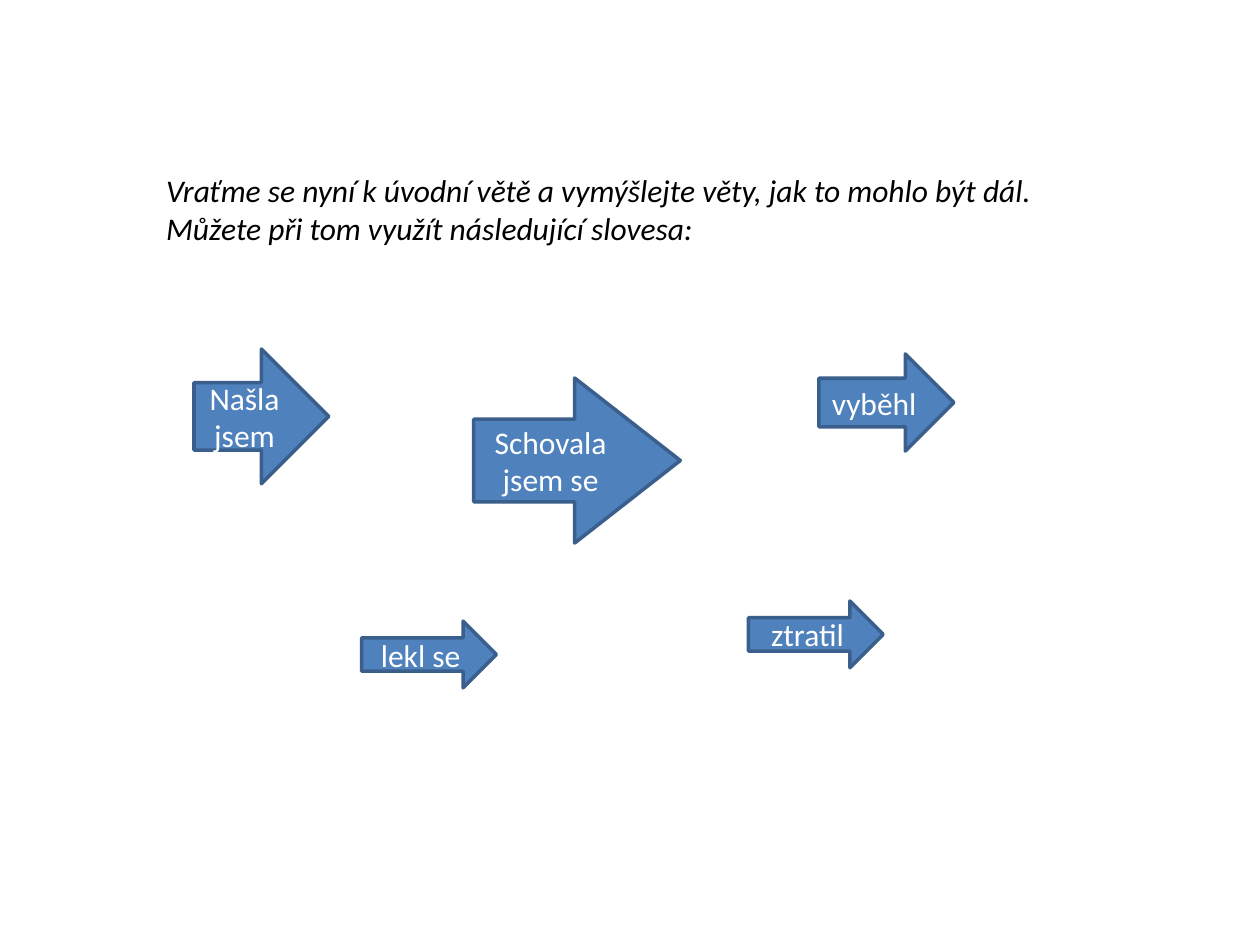
from pptx import Presentation
from pptx.dml.color import RGBColor
from pptx.enum.shapes import MSO_SHAPE
from pptx.enum.text import MSO_ANCHOR, PP_ALIGN
from pptx.util import Inches, Pt

RIGHT_ARROW = MSO_SHAPE.RIGHT_ARROW
MIDDLE = MSO_ANCHOR.MIDDLE
LEFT, CENTER = PP_ALIGN.LEFT, PP_ALIGN.CENTER

BLANK_LAYOUT = 6
FONT = "Calibri"
BLACK, WHITE = "000000", "FFFFFF"
BLUE, DARK_BLUE = "4F81BD", "3A5F8C"

INSTRUCTIONS = (
    "Vraťme se nyní k úvodní větě a vymýšlejte věty, jak to mohlo být dál.\n"
    "Můžete při tom využít následující slovesa:"
)

# Verb, left, top, width, height, head length relative to height
VERBS = [
    ("Našla jsem", 1.54, 2.77, 1.07, 1.07, 0.5),
    ("Schovala jsem se", 3.76, 3, 1.64, 1.31, 0.64),
    ("vyběhl", 6.5, 2.81, 1.07, 0.77, 0.5),
    ("lekl se", 2.87, 4.93, 1.07, 0.53, 0.5),
    ("ztratil", 5.94, 4.77, 1.07, 0.53, 0.5),
]


def color(value):
    return RGBColor.from_string(value)


def write(shape, text, text_color, align, italic=False):
    frame = shape.text_frame
    frame.word_wrap = True
    frame.text = text
    for para in frame.paragraphs:
        para.alignment = align
        for span in para.runs:
            span.font.name = FONT
            span.font.size = Pt(18)
            span.font.italic = italic
            span.font.color.rgb = color(text_color)


def add_instructions(page):
    box = page.shapes.add_textbox(
        Inches(1.22), Inches(1.31), Inches(7.2), Inches(1.01))
    write(box, INSTRUCTIONS, BLACK, LEFT, italic=True)


def add_verb_arrow(page, verb, left, top, width, height, head):
    arrow = page.shapes.add_shape(
        RIGHT_ARROW, Inches(left), Inches(top), Inches(width), Inches(height))
    arrow.adjustments[1] = head
    arrow.shadow.inherit = False
    arrow.fill.solid()
    arrow.fill.fore_color.rgb = color(BLUE)
    arrow.line.color.rgb = color(DARK_BLUE)
    arrow.line.width = Pt(2)
    arrow.text_frame.vertical_anchor = MIDDLE
    write(arrow, verb, WHITE, CENTER)


def main():
    deck = Presentation()
    deck.slide_width, deck.slide_height = Inches(10), Inches(7.5)
    page = deck.slides.add_slide(deck.slide_layouts[BLANK_LAYOUT])

    # Task above, verbs to choose from below
    add_instructions(page)
    for verb in VERBS:
        add_verb_arrow(page, *verb)

    deck.save("out.pptx")


if __name__ == "__main__":
    main()
